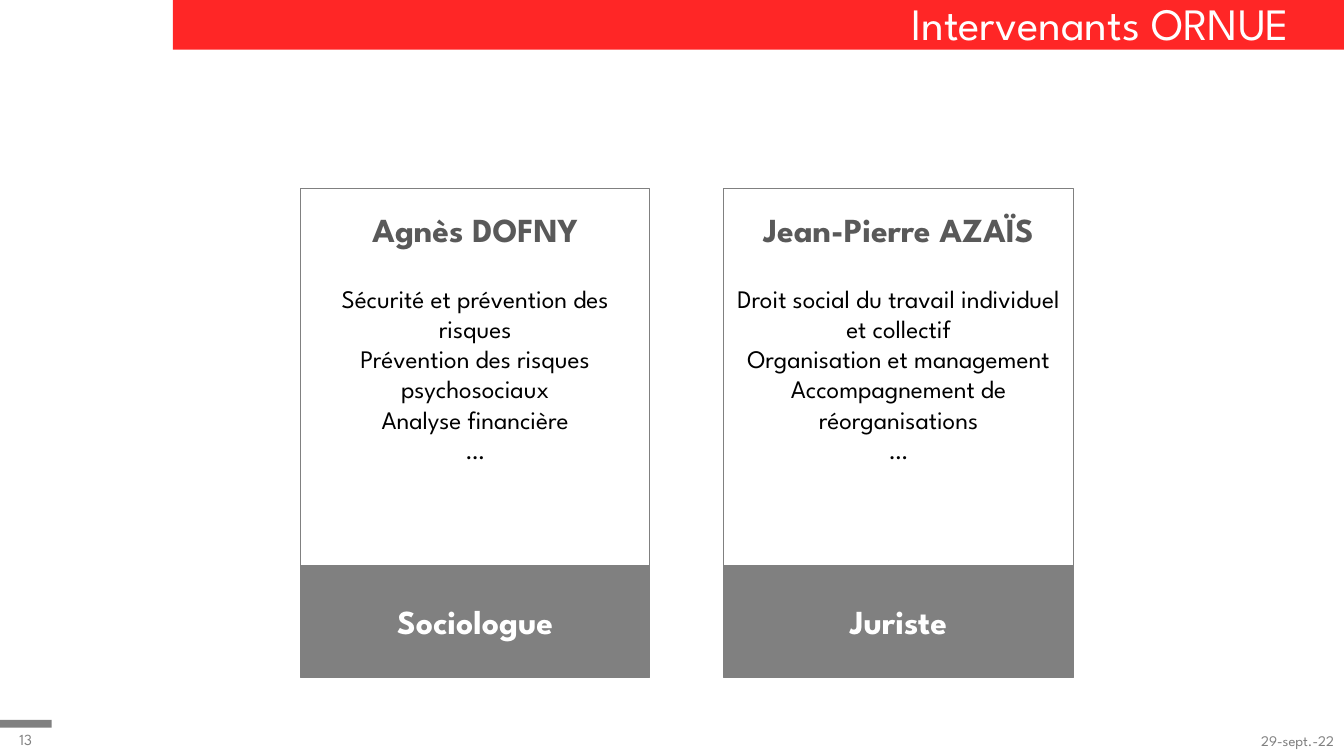
from lxml.etree import SubElement
from pptx import Presentation
from pptx.dml.color import RGBColor
from pptx.enum.shapes import MSO_SHAPE
from pptx.enum.text import MSO_ANCHOR, MSO_AUTO_SIZE, PP_ALIGN
from pptx.oxml.ns import qn
from pptx.util import Cm, Pt

TITLE = "Intervenants ORNUE"
SPEAKERS = [
    ("Agnès DOFNY", "Sociologue", [
        "Sécurité et prévention des risques",
        "Prévention des risques psychosociaux",
        "Analyse financière",
        "…",
    ]),
    ("Jean-Pierre AZAÏS", "Juriste", [
        "Droit social du travail individuel et collectif",
        "Organisation et management Accompagnement de réorganisations",
        "…",
    ]),
]
PAGE_NUMBER = "13"
DATE = "29-sept.-22"

FONT = "League Spartan"
RED = RGBColor(0xFF, 0x00, 0x00)
GREY = RGBColor(0x80, 0x80, 0x80)
DARK_GREY = RGBColor(0x59, 0x59, 0x59)
BLACK = RGBColor(0x00, 0x00, 0x00)
WHITE = RGBColor(0xFF, 0xFF, 0xFF)

SLIDE_WIDTH, SLIDE_HEIGHT = 33.87, 19.05
BAND_LEFT, BAND_HEIGHT = 4.36, 1.25
CARD_LEFT, CARD_TOP, CARD_WIDTH, CARD_HEIGHT = 7.57, 4.75, 8.81, 9.55
CARD_STEP = 10.67
ROLE_TOP, ROLE_HEIGHT = 14.25, 2.82


def place(shape, left, top, width, height):
    shape.left, shape.top = Cm(left), Cm(top)
    shape.width, shape.height = Cm(width), Cm(height)


def add_rectangle(slide, area, fill=None, line=None):
    box = slide.shapes.add_shape(MSO_SHAPE.RECTANGLE, *map(Cm, area))
    box.shadow.inherit = False
    if fill is None:
        box.fill.background()
    else:
        box.fill.solid()
        box.fill.fore_color.rgb = fill
    if line is None:
        box.line.fill.background()
    else:
        box.line.color.rgb = line
        box.line.width = Pt(0.75)
    return box


def write(para, text, size, color, align=PP_ALIGN.CENTER, bold=False):
    para.text = text
    para.alignment = align
    for span in para.runs:
        span.font.name = FONT
        span.font.size = Pt(size)
        span.font.bold = bold
        span.font.color.rgb = color


def add_band(slide):
    band = add_rectangle(slide, (BAND_LEFT, 0, SLIDE_WIDTH - BAND_LEFT, BAND_HEIGHT), RED)
    color = band.fill._xPr.find(qn("a:solidFill"))[0]
    SubElement(color, qn("a:alpha"), val="85000")
    slide.shapes._spTree.insert(2, band._element)


def format_title(slide):
    title = slide.shapes.title
    place(title, 4.67, 0, 28.09, 1.4)
    frame = title.text_frame
    frame.auto_size = MSO_AUTO_SIZE.NONE
    frame.vertical_anchor = MSO_ANCHOR.BOTTOM
    para = frame.paragraphs[0]
    write(para, TITLE, 32, WHITE, PP_ALIGN.RIGHT)
    para.line_spacing = 0.9


def add_card(slide, left, name, role, topics):
    card = add_rectangle(slide, (left, CARD_TOP, CARD_WIDTH, CARD_HEIGHT), line=GREY)
    frame = card.text_frame
    frame.word_wrap = True
    frame.vertical_anchor = MSO_ANCHOR.TOP
    frame.margin_top = Cm(0.52)
    heading = frame.paragraphs[0]
    write(heading, name, 24, DARK_GREY, bold=True)
    heading.space_after = Pt(24)
    for topic in topics:
        write(frame.add_paragraph(), topic, 18, BLACK)

    footer = add_rectangle(slide, (left, ROLE_TOP, CARD_WIDTH, ROLE_HEIGHT), GREY, GREY)
    footer.text_frame.word_wrap = True
    footer.text_frame.vertical_anchor = MSO_ANCHOR.MIDDLE
    write(footer.text_frame.paragraphs[0], role, 24, WHITE, bold=True)


def add_label(slide, area, text, size, align):
    box = slide.shapes.add_textbox(*map(Cm, area))
    box.text_frame.word_wrap = True
    box.text_frame.vertical_anchor = MSO_ANCHOR.BOTTOM
    write(box.text_frame.paragraphs[0], text, size, GREY, align)


def main():
    deck = Presentation()
    deck.slide_width, deck.slide_height = Cm(SLIDE_WIDTH), Cm(SLIDE_HEIGHT)
    slide = deck.slides.add_slide(deck.slide_layouts[5])
    add_band(slide)
    add_rectangle(slide, (0, 18.14, 1.3, 0.2), GREY)
    format_title(slide)
    for index, (name, role, topics) in enumerate(SPEAKERS):
        add_card(slide, CARD_LEFT + index * CARD_STEP, name, role, topics)
    add_label(slide, (0, 18.24, 1.3, 0.76), PAGE_NUMBER, 11, PP_ALIGN.CENTER)
    add_label(slide, (26.25, 17.98, 7.62, 1.02), DATE, 10.5, PP_ALIGN.RIGHT)
    deck.save("out.pptx")


if __name__ == "__main__":
    main()
